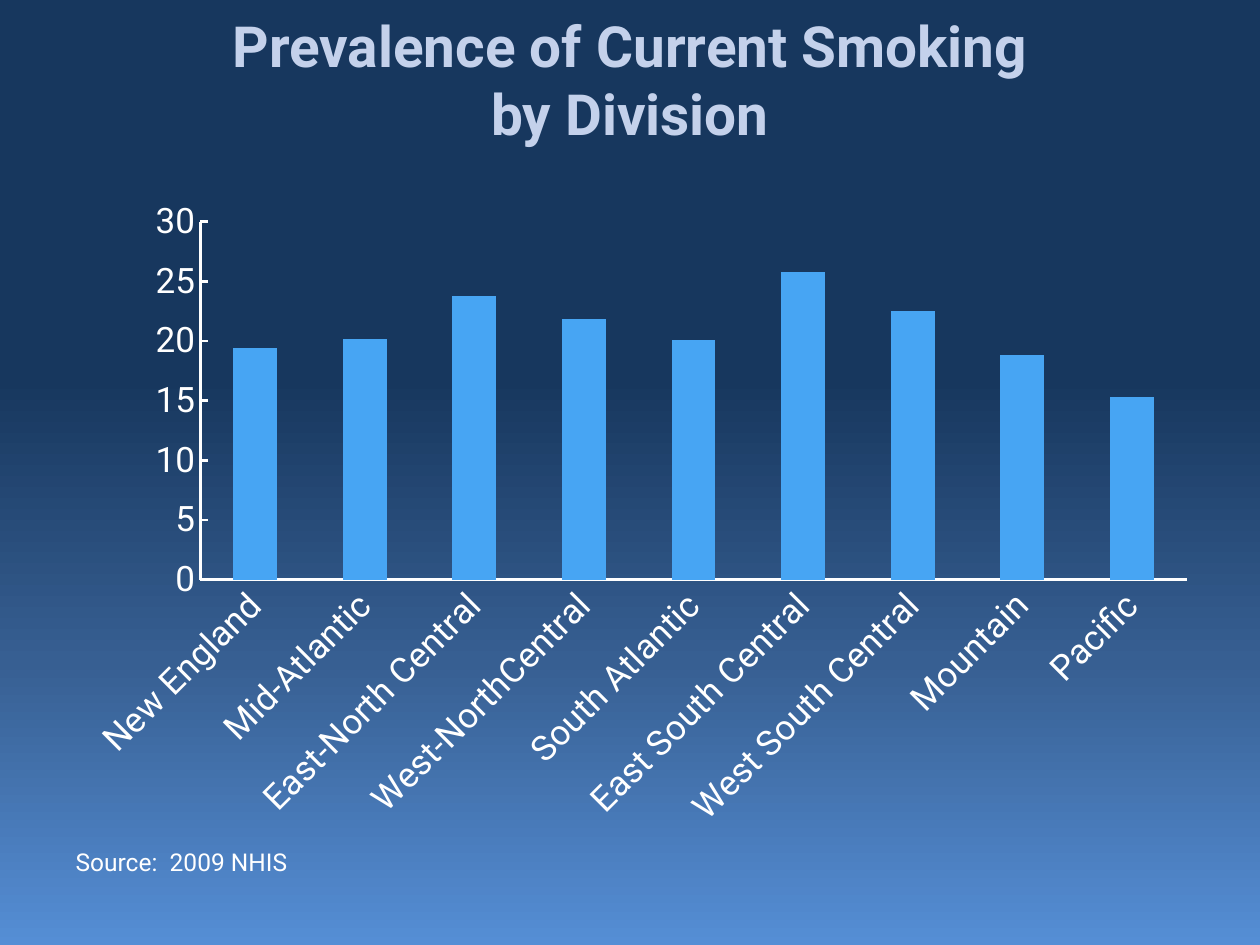
import copy
from dataclasses import dataclass

import pptx
import pptx.chart.data
import pptx.dml.color
import pptx.enum.chart
import pptx.enum.text
import pptx.oxml
import pptx.oxml.ns
import pptx.util
from pptx.util import Inches, Pt


@dataclass(frozen=True)
class Theme:
    font: str = "Roboto"
    title_color: str = "C4D1EB"
    text_color: str = "FFFFFF"
    bar_color: str = "47A5F3"
    background: tuple = ((0, "17375E"), (40, "17375E"), (70, "375F92"), (100, "558ED5"))
    title_size: float = 32.4
    axis_size: float = 20
    source_size: float = 14
    axis_width: float = 1.5


DIVISIONS = {
    "New England": 19.4,
    "Mid-Atlantic": 20.2,
    "East-North Central": 23.8,
    "West-NorthCentral": 21.8,
    "South Atlantic": 20.1,
    "East South Central": 25.8,
    "West South Central": 22.5,
    "Mountain": 18.8,
    "Pacific": 15.3,
}


def rgb(color):
    return pptx.dml.color.RGBColor.from_string(color)


def format_font(font, name, size, color, bold=False):
    font.name = name
    font.size = Pt(size)
    font.bold = bold
    font.color.rgb = rgb(color)


def write_text(box, text, *, align, anchor, **font_format):
    """Fill a box with one paragraph; a newline becomes a line break."""
    frame = box.text_frame
    frame.word_wrap = True
    frame.auto_size = pptx.enum.text.MSO_AUTO_SIZE.NONE
    frame.vertical_anchor = anchor
    para = frame.paragraphs[0]
    para.text = text.replace("\n", "\v")
    para.alignment = align
    for span in para.runs:
        format_font(span.font, **font_format)
    return para


def place(shape, left, top, width, height):
    shape.left, shape.top = Inches(left), Inches(top)
    shape.width, shape.height = Inches(width), Inches(height)


class SlideBuilder:
    def __init__(self, deck, theme):
        self.theme = theme
        self.page = deck.slides.add_slide(deck.slide_layouts.get_by_name("Title and Content"))

    def background(self):
        fill = self.page.background.fill
        fill.gradient()
        fill.gradient_angle = 270
        first_stop = fill.gradient_stops[0]._gs
        stop_list = first_stop.getparent()
        for _ in self.theme.background[len(stop_list):]:
            stop_list.append(copy.deepcopy(first_stop))
        for stop, (percent, color) in zip(fill.gradient_stops, self.theme.background):
            stop.position = percent / 100
            stop.color.rgb = rgb(color)

    def title(self, text, *area):
        box = self.page.shapes.title
        place(box, *area)
        write_text(box, text, align=pptx.enum.text.PP_ALIGN.CENTER,
                   anchor=pptx.enum.text.MSO_ANCHOR.MIDDLE, name=self.theme.font,
                   size=self.theme.title_size, color=self.theme.title_color, bold=True)

    def source(self, text, *area):
        box = self.page.placeholders[1]
        place(box, *area)
        para = write_text(box, text, align=pptx.enum.text.PP_ALIGN.LEFT,
                          anchor=pptx.enum.text.MSO_ANCHOR.TOP, name=self.theme.font,
                          size=self.theme.source_size, color=self.theme.text_color)
        para.space_before = Pt(0.2 * self.theme.source_size)
        properties = para._p.get_or_add_pPr()
        properties.set("marL", str(Inches(0.38)))
        properties.set("indent", str(-Inches(0.38)))
        pptx.oxml.ns.qn("a:buNone")
        properties.append(pptx.oxml.parse_xml(
            f'<a:buNone {pptx.oxml.ns.nsdecls("a")}/>'))

    def column_chart(self, values, *area):
        data = pptx.chart.data.CategoryChartData()
        data.categories = list(values)
        data.add_series("Series 1", list(values.values()))
        frame = self.page.shapes.add_chart(
            pptx.enum.chart.XL_CHART_TYPE.COLUMN_CLUSTERED,
            *(Inches(length) for length in area), data)
        chart = frame.chart
        chart.has_legend = False
        chart.has_title = False
        format_font(chart.font, "Calibri", 18, self.theme.text_color)

        plot = chart.plots[0]
        plot.gap_width = 150
        plot.vary_by_categories = False
        bars = plot.series[0].format.fill
        bars.solid()
        bars.fore_color.rgb = rgb(self.theme.bar_color)

        tick_mark = pptx.enum.chart.XL_TICK_MARK
        self.axis(chart.category_axis, tick_mark.NONE, rotation=-45)
        self.axis(chart.value_axis, tick_mark.INSIDE)
        chart.value_axis.minimum_scale = 0
        chart.value_axis.maximum_scale = 30
        chart.value_axis.major_unit = 5
        self.plot_area(chart, x=0.11, y=0.05, w=0.87, h=0.55)

    def axis(self, axis, tick_mark, rotation=0):
        axis.has_major_gridlines = False
        axis.major_tick_mark = tick_mark
        axis.minor_tick_mark = pptx.enum.chart.XL_TICK_MARK.NONE
        axis.format.line.color.rgb = rgb(self.theme.text_color)
        axis.format.line.width = Pt(self.theme.axis_width)
        format_font(axis.tick_labels.font, self.theme.font,
                    self.theme.axis_size, self.theme.text_color)
        label_body = axis._element.find(".//" + pptx.oxml.ns.qn("a:bodyPr"))
        label_body.set("rot", str(rotation * 60000))

    def plot_area(self, chart, **fractions):
        """Fix the inner plot rectangle as fractions of the chart frame."""
        area = chart._chartSpace.chart.plotArea
        for layout in area.findall(pptx.oxml.ns.qn("c:layout")):
            area.remove(layout)
        modes = "".join(f'<c:{side}Mode val="edge"/>' for side in "xy")
        sizes = "".join(f'<c:{side} val="{value}"/>' for side, value in fractions.items())
        area.insert(0, pptx.oxml.parse_xml(
            f'<c:layout {pptx.oxml.ns.nsdecls("c")}><c:manualLayout>'
            f'<c:layoutTarget val="inner"/>{modes}{sizes}'
            '</c:manualLayout></c:layout>'))


def main():
    deck = pptx.Presentation()
    deck.slide_width, deck.slide_height = Inches(10), Inches(7.5)
    slide = SlideBuilder(deck, Theme())
    slide.background()
    slide.title("Prevalence of Current Smoking\nby Division", 0.5, 0, 9, 1.25)
    slide.source("Source:  2009 NHIS", 0.5, 6.67, 9, 0.25)
    slide.column_chart(DIVISIONS, 0.6, 1.5, 9, 5.17)
    deck.save("out.pptx")


if __name__ == "__main__":
    main()
